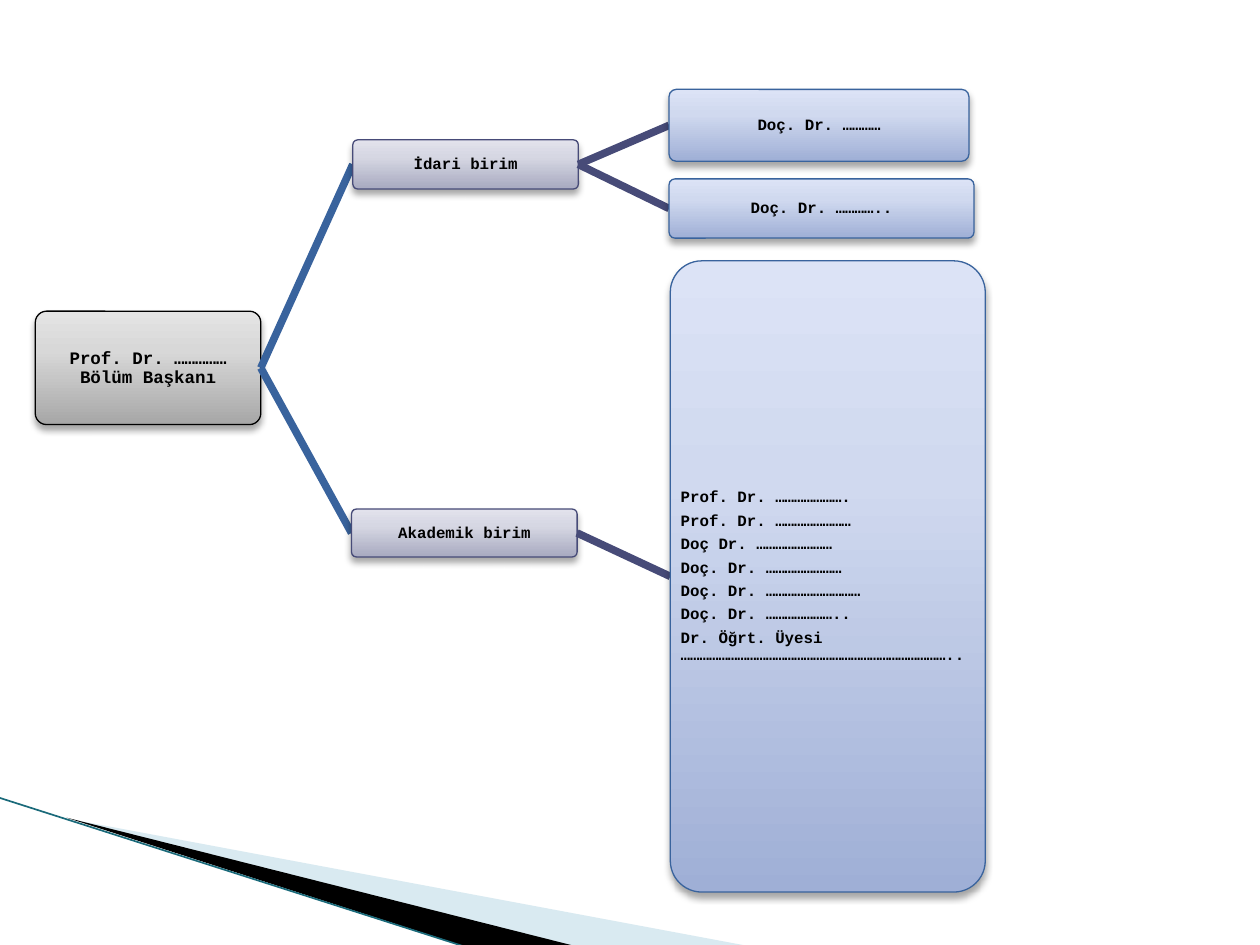
import pptx
import pptx.dml.color
import pptx.enum.shapes
import pptx.enum.text
import pptx.oxml
import pptx.oxml.ns
import pptx.util
from pptx.util import Inches

FONT = "Courier New"
BLACK = "000000"
NAMESPACE = pptx.oxml.ns.nsdecls("a")

# Line colour and gradient stops (bottom, 65 %, top) of each level
LEVELS = {
    "head": (BLACK, ("A7A7A7", "D8D8D8", "E4E4E4")),
    "unit": ("474B78", ("A8AAC0", "D6D7E3", "E2E2EC")),
    "staff": ("39639D", ("9FAFD6", "D0D9EF", "DCE3F6")),
}

ACADEMIC_STAFF = [
    "Prof. Dr. ………………….",
    "Prof. Dr. ……………………",
    "Doç Dr. ……………………",
    "Doç. Dr. ……………………",
    "Doç. Dr. …………………………",
    "Doç. Dr. …………………..",
    "Dr. Öğrt. Üyesi …………………………………………………………………………..",
]

# Each node: level, box (left, top, width, height), lines of text, children
ORGANISATION = (
    "head", (0.28, 2.47, 1.79, 0.9), ["Prof. Dr. …………… Bölüm Başkanı"], [
        ("unit", (2.8, 1.11, 1.79, 0.39), ["İdari birim"], [
            ("staff", (5.31, 0.71, 2.38, 0.57), ["Doç. Dr. …………"], []),
            ("staff", (5.31, 1.42, 2.42, 0.47), ["Doç. Dr. ………….."], []),
        ]),
        ("unit", (2.79, 4.04, 1.79, 0.38), ["Akademik birim"], [
            ("staff", (5.32, 2.07, 2.5, 5.01), ACADEMIC_STAFF, []),
        ]),
    ])


def color(value):
    return pptx.dml.color.RGBColor.from_string(value)


class Chart:
    """Holds the slide and the style of the organisation chart."""

    def __init__(self, slide):
        self.slide = slide

    def wedge(self, points, fill, alpha=100):
        (left, top), *others = [(Inches(x), Inches(y)) for x, y in points]
        builder = self.slide.shapes.build_freeform(left, top)
        builder.add_line_segments(others)
        shape = builder.convert_to_shape()
        shape.shadow.inherit = False
        shape.fill.solid()
        shape.fill.fore_color.rgb = color(fill)
        shape.line.fill.background()
        if alpha < 100:
            clr = shape.fill._xPr.find(".//" + pptx.oxml.ns.qn("a:srgbClr"))
            clr.append(pptx.oxml.parse_xml(f'<a:alpha {NAMESPACE} val="{alpha * 1000}"/>'))

    def line(self, start, end, line_color, width):
        connector = self.slide.shapes.add_connector(
            pptx.enum.shapes.MSO_CONNECTOR.STRAIGHT,
            *(Inches(value) for value in (*start, *end)))
        connector.line.color.rgb = color(line_color)
        connector.line.width = pptx.util.Pt(width)
        connector._element.spPr.append(pptx.oxml.parse_xml(f"<a:effectLst {NAMESPACE}/>"))

    def box(self, level, place, texts):
        line_color, stops = LEVELS[level]
        shape = self.slide.shapes.add_shape(
            pptx.enum.shapes.MSO_SHAPE.ROUNDED_RECTANGLE, *map(Inches, place))
        shape.adjustments[0] = 0.1
        shape.line.color.rgb = color(line_color)
        shape.line.width = pptx.util.Pt(0.75)
        self.gradient_and_shadow(shape, stops)

        frame = shape.text_frame
        frame.word_wrap = True
        frame.vertical_anchor = pptx.enum.text.MSO_ANCHOR.MIDDLE
        frame.margin_left = frame.margin_right = Inches(0.01)
        frame.margin_top = frame.margin_bottom = Inches(0.01)
        align = pptx.enum.text.PP_ALIGN
        size = 10 if level == "head" else 9
        for index, text in enumerate(texts):
            paragraph = frame.add_paragraph() if index else frame.paragraphs[0]
            paragraph.alignment = align.LEFT if len(texts) > 1 else align.CENTER
            paragraph.line_spacing = 0.9
            paragraph.space_after = pptx.util.Pt(0.4 * size)
            run = paragraph.add_run()
            run.text = text
            run.font.name = FONT
            run.font.size = pptx.util.Pt(size)
            run.font.bold = True
            run.font.color.rgb = color(BLACK)

    def gradient_and_shadow(self, shape, stops):
        """Fill upwards through three stops and cast a soft shadow below."""
        stop_xml = "".join(
            f'<a:gs pos="{position * 1000}"><a:srgbClr val="{stop}"/></a:gs>'
            for position, stop in zip((0, 65, 100), stops))
        properties = shape._element.spPr
        properties.find(pptx.oxml.ns.qn("a:prstGeom")).addnext(pptx.oxml.parse_xml(
            f'<a:gradFill {NAMESPACE} rotWithShape="1"><a:gsLst>{stop_xml}</a:gsLst>'
            '<a:lin ang="16200000" scaled="0"/></a:gradFill>'))
        blur, distance = pptx.util.Pt(4), pptx.util.Pt(3)
        properties.append(pptx.oxml.parse_xml(
            f'<a:effectLst {NAMESPACE}><a:outerShdw blurRad="{blur}" dist="{distance}" '
            f'dir="5400000" rotWithShape="0"><a:srgbClr val="{BLACK}">'
            '<a:alpha val="35000"/></a:srgbClr></a:outerShdw></a:effectLst>'))

    def branch(self, node):
        """Draw a node, then a line to each child and the child's own branch."""
        level, place, texts, children = node
        self.box(level, place, texts)
        left, top, width, height = place
        line_color = LEVELS["staff" if level == "head" else "unit"][0]
        for child in children:
            child_left, child_top, _, child_height = child[1]
            self.line((left + width, top + height / 2),
                      (child_left, child_top + child_height / 2), line_color, 4.33)
            self.branch(child)


def main():
    presentation = pptx.Presentation()
    presentation.slide_width = Inches(10)
    presentation.slide_height = Inches(7.5)
    chart = Chart(presentation.slides.add_slide(presentation.slide_layouts[6]))

    chart.wedge([(0.55, 6.5), (5.95, 7.51), (4.56, 7.51)], "A0CBDC", alpha=40)
    chart.wedge([(0.53, 6.49), (4.57, 7.51), (3.72, 7.52)], BLACK)
    chart.line((-0.01, 6.33), (3.71, 7.52), "1A6A7A", 0.95)
    chart.branch(ORGANISATION)

    presentation.save("out.pptx")


if __name__ == "__main__":
    main()
